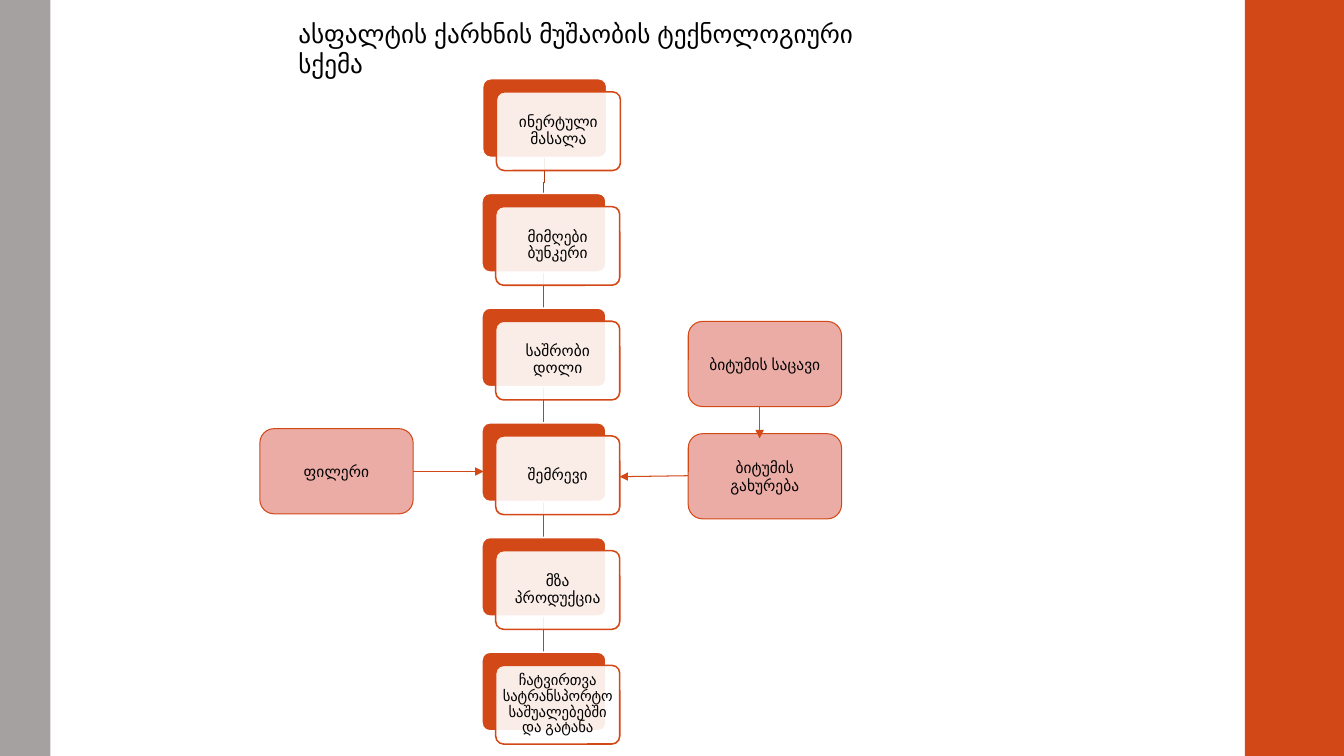
from lxml import etree
from pptx import Presentation
from pptx.dml.color import RGBColor
from pptx.enum.shapes import MSO_CONNECTOR as CONN, MSO_SHAPE as SHAPE
from pptx.enum.text import MSO_ANCHOR as ANCHOR, PP_ALIGN as ALIGN
from pptx.oxml.ns import qn
from pptx.util import Pt

W, H = 960, 540
SERIF, SANS = "TeX Gyre Schola", "Lato"
C = {"orange": "D34817", "gray": "A6A1A1", "pink": "ECACA6", "white": "FFFFFF",
     "black": "000000", "link": "BF4115", "first_link": "A93A12"}
STEPS = ["ინერტული მასალა", "მიმღები ბუნკერი", "საშრობი დოლი", "შემრევი",
         "მზა პროდუქცია", "ჩატვირთვა სატრანსპორტო საშუალებებში და გატანა"]


def rgb(name):
    return RGBColor.from_string(C[name])


def add_text(sp, text, font=SERIF, size=11, align=ALIGN.CENTER, anchor=ANCHOR.MIDDLE,
             inset=None, spacing=None):
    tf = sp.text_frame
    tf.word_wrap = True
    tf.vertical_anchor = anchor
    if inset is not None:
        tf.margin_left = tf.margin_right = tf.margin_top = tf.margin_bottom = Pt(inset)
    p = tf.paragraphs[0]
    p.alignment = align
    if spacing:
        p.line_spacing = spacing
    r = p.add_run()
    r.text = text
    r.font.name, r.font.size = font, Pt(size)
    r.font.color.rgb = rgb("black")


def add_box(s, x, y, w, h, fill, line=None, line_w=0.75, kind=SHAPE.ROUNDED_RECTANGLE,
            radius=None, alpha=None):
    sp = s.shapes.add_shape(kind, Pt(x), Pt(y), Pt(w), Pt(h))
    sp.shadow.inherit = False
    sp.fill.solid()
    sp.fill.fore_color.rgb = rgb(fill)
    if alpha:
        color = sp._element.spPr.find(qn("a:solidFill"))[0]
        etree.SubElement(color, qn("a:alpha")).set("val", str(alpha * 1000))
    if line:
        sp.line.color.rgb = rgb(line)
        sp.line.width = Pt(line_w)
    else:
        sp.line.fill.background()
    if radius:
        sp.adjustments[0] = radius
    return sp


def add_line(s, x1, y1, x2, y2, color="orange", width=0.75, arrow=True):
    cn = s.shapes.add_connector(CONN.STRAIGHT, Pt(x1), Pt(y1), Pt(x2), Pt(y2))
    cn.line.color.rgb = rgb(color)
    cn.line.width = Pt(width)
    sp_pr = cn._element.spPr
    if arrow:
        etree.SubElement(sp_pr.find(qn("a:ln")), qn("a:tailEnd")).set("type", "triangle")
    etree.SubElement(sp_pr, qn("a:effectLst"))


def add_elbow(s, points, color, width):
    start, *rest = [(Pt(x), Pt(y)) for x, y in points]
    fb = s.shapes.build_freeform(*start)
    fb.add_line_segments(rest, close=False)
    sp = fb.convert_to_shape()
    sp.shadow.inherit = False
    sp.fill.background()
    sp.line.color.rgb = rgb(color)
    sp.line.width = Pt(width)


def side_bars(s):
    for x, w, fill in [(889.2, W - 889.2, "orange"), (0, 36, "gray")]:
        add_box(s, x, 0, w, H, fill, kind=SHAPE.RECTANGLE)


def title(s, x, y, w, h):
    sp = s.shapes.add_textbox(Pt(x), Pt(y), Pt(w), Pt(h))
    add_text(sp, "ასფალტის ქარხნის მუშაობის ტექნოლოგიური სქემა", size=18,
             align=ALIGN.LEFT, anchor=ANCHOR.TOP)


def process_column(s, x, y, w, h, pitch):
    # Links run from the bottom of one back card to the top of the next
    mid, shift = x + 44, 0.5
    for i in range(1, len(STEPS)):
        top, end = y + (i - 1) * pitch + h, y + i * pitch
        if i == 1:
            add_elbow(s, [(mid + shift, top), (mid + shift, top + 18), (mid, top + 18),
                          (mid, end)], "first_link", 1.1)
        else:
            add_line(s, mid, top, mid, end, "link", 1.1, arrow=False)
    # Each step: solid back card, translucent front card, label
    for i, step in enumerate(STEPS):
        cx, cy = x + (shift if i == 0 else 0), y + i * pitch
        add_box(s, cx, cy, w, h, "orange", "white", 1.1, radius=0.1)
        add_box(s, cx + 9.8, cy + 9.4, w, h, "white", "orange", 1.1, radius=0.1, alpha=90)
        sp = s.shapes.add_textbox(Pt(cx + 11.6), Pt(cy + 11), Pt(w - 3.6), Pt(h - 3.6))
        # The long last label gets smaller type and narrower margins
        size, inset = (10.5, 1.5) if step == STEPS[-1] else (11, 3.6)
        add_text(sp, step, size=size, inset=inset, spacing=0.9)


def side_inputs(s, x, y, w, h):
    # Bitumen boxes on the right, filler box on the left
    right = x + 306
    for bx, by, text in [(right, y, "ბიტუმის საცავი"), (right, y + 80.2, "ბიტუმის გახურება"),
                         (x, y + 76.6, "ფილერი")]:
        add_text(add_box(s, bx, by, w, h, "pink", "orange"), text, font=SANS)
    # Arrows: store to heater, heater to mixer, filler to mixer
    add_line(s, right + 51, y + h, right + 51, y + 83.5)
    add_line(s, right, y + 110.2, x + 257, y + 110.9)
    add_line(s, x + w, y + 107.2, x + 159.8, y + 107.2)


def main():
    prs = Presentation()
    prs.slide_width, prs.slide_height = Pt(W), Pt(H)
    s = prs.slides.add_slide(prs.slide_layouts[6])
    side_bars(s)
    title(s, 206, 9.4, 448, 29)
    process_column(s, 344.3, 56.2, 88.6, 56.2, pitch=81.93)
    side_inputs(s, 185.6, 229.6, 109.5, 60.8)
    prs.save("out.pptx")


if __name__ == "__main__":
    main()
